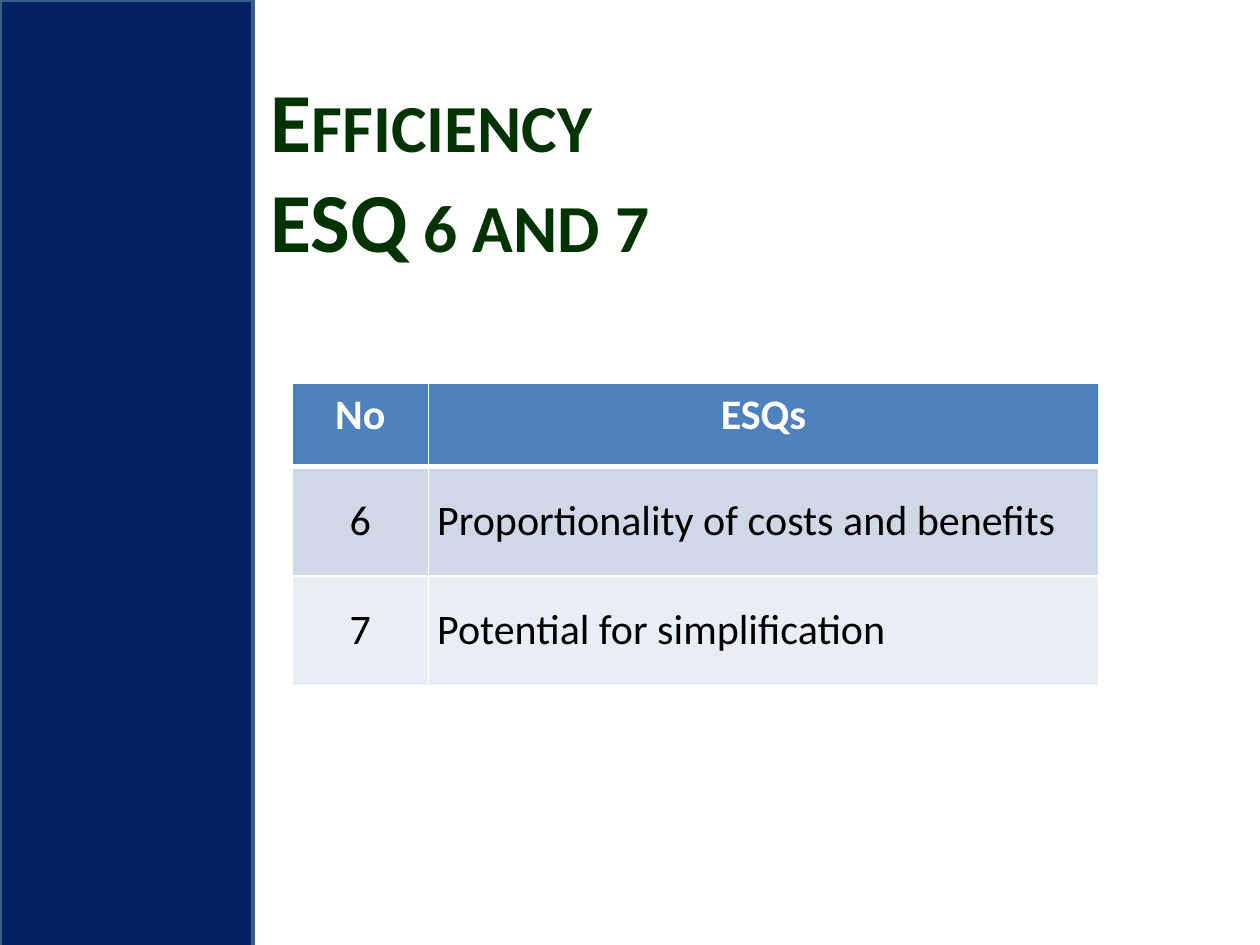
import pptx
import pptx.util
import pptx.dml.color
import pptx.enum.shapes
import pptx.enum.text
import pptx.oxml
import pptx.oxml.ns
from lxml import etree

TITLE = "Efficiency\vESQ 6 and 7"
ROWS = [
    ("No", "ESQs"),
    ("6", "Proportionality of costs and benefits"),
    ("7", "Potential for simplification"),
]
THEME = {
    "font": "Calibri", "title_size": 48, "table_size": 24,
    "title": "003300", "sidebar": "002060", "sidebar_line": "3A5F8C",
    "header": "4F81BD", "header_text": "FFFFFF", "body_text": "000000",
    "bands": ("D0D8E8", "E9EDF4"), "border": "FFFFFF",
}
WIDTH, HEIGHT = 10, 7.5
SIDEBAR = (0, 0, 2.01, 7.52)
TITLE_BOX = (2.05, 0.03, 7.35, 2.62)
TABLE_LEFT, TABLE_TOP = 2.32, 3.04
COLUMN_WIDTHS = (1.08, 5.32)
ROW_HEIGHTS = (0.66, 0.87, 0.87)


def inches(*values):
    return [pptx.util.Inches(value) for value in values]


def color(name):
    return pptx.dml.color.RGBColor.from_string(name)


def style_font(font, size, shade, bold):
    font.name = THEME["font"]
    font.size = pptx.util.Pt(size)
    font.bold = bold
    font.color.rgb = color(shade)


def add_borders(cell, bottom, top):
    properties = cell._tc.get_or_add_tcPr()
    for side, points in (("L", 1), ("R", 1), ("T", top), ("B", bottom)):
        line = etree.SubElement(properties, pptx.oxml.ns.qn("a:ln" + side),
                                w=str(pptx.util.Pt(points)))
        fill = etree.SubElement(line, pptx.oxml.ns.qn("a:solidFill"))
        etree.SubElement(fill, pptx.oxml.ns.qn("a:srgbClr"), val=THEME["border"])


def add_sidebar(page):
    sidebar = page.shapes.add_shape(
        pptx.enum.shapes.MSO_SHAPE.RECTANGLE, *inches(*SIDEBAR))
    sidebar.shadow.inherit = False
    sidebar.fill.solid()
    sidebar.fill.fore_color.rgb = color(THEME["sidebar"])
    sidebar.line.color.rgb = color(THEME["sidebar_line"])
    sidebar.line.width = pptx.util.Pt(2)


def add_title(page):
    frame = page.shapes.add_textbox(*inches(*TITLE_BOX)).text_frame
    frame.word_wrap = True
    frame.vertical_anchor = pptx.enum.text.MSO_ANCHOR.MIDDLE
    para = frame.paragraphs[0]
    para.text = TITLE
    for span in para.runs:
        style_font(span.font, THEME["title_size"], THEME["title"], True)
        span._r.get_or_add_rPr().set("cap", "small")


def style_cell(cell, row, column):
    header = row == 0
    add_borders(cell, bottom=3 if header else 1, top=3 if row == 1 else 1)
    cell.fill.solid()
    shade = THEME["header"] if header else THEME["bands"][(row - 1) % 2]
    cell.fill.fore_color.rgb = color(shade)
    if not header:
        cell.vertical_anchor = pptx.enum.text.MSO_ANCHOR.MIDDLE
        cell.margin_left, cell.margin_right = inches(0.07, 0.07)
        cell.margin_top = cell.margin_bottom = 0
    para = cell.text_frame.paragraphs[0]
    centred = header or column == 0
    para.alignment = (pptx.enum.text.PP_ALIGN.CENTER if centred
                      else pptx.enum.text.PP_ALIGN.LEFT)
    text_shade = THEME["header_text"] if header else THEME["body_text"]
    style_font(para.runs[0].font, THEME["table_size"], text_shade, header)


def add_questions(page):
    table = page.shapes.add_table(
        len(ROWS), len(COLUMN_WIDTHS),
        *inches(TABLE_LEFT, TABLE_TOP, sum(COLUMN_WIDTHS), sum(ROW_HEIGHTS))).table
    for column, width in zip(table.columns, COLUMN_WIDTHS):
        column.width = pptx.util.Inches(width)
    for row, height in zip(table.rows, ROW_HEIGHTS):
        row.height = pptx.util.Inches(height)
    for row, texts in enumerate(ROWS):
        for column, text in enumerate(texts):
            cell = table.cell(row, column)
            cell.text_frame.text = text
            style_cell(cell, row, column)


def main():
    deck = pptx.Presentation()
    deck.slide_width, deck.slide_height = inches(WIDTH, HEIGHT)
    page = deck.slides.add_slide(deck.slide_layouts[6])
    add_sidebar(page)
    add_title(page)
    add_questions(page)
    deck.save("out.pptx")


if __name__ == "__main__":
    main()
